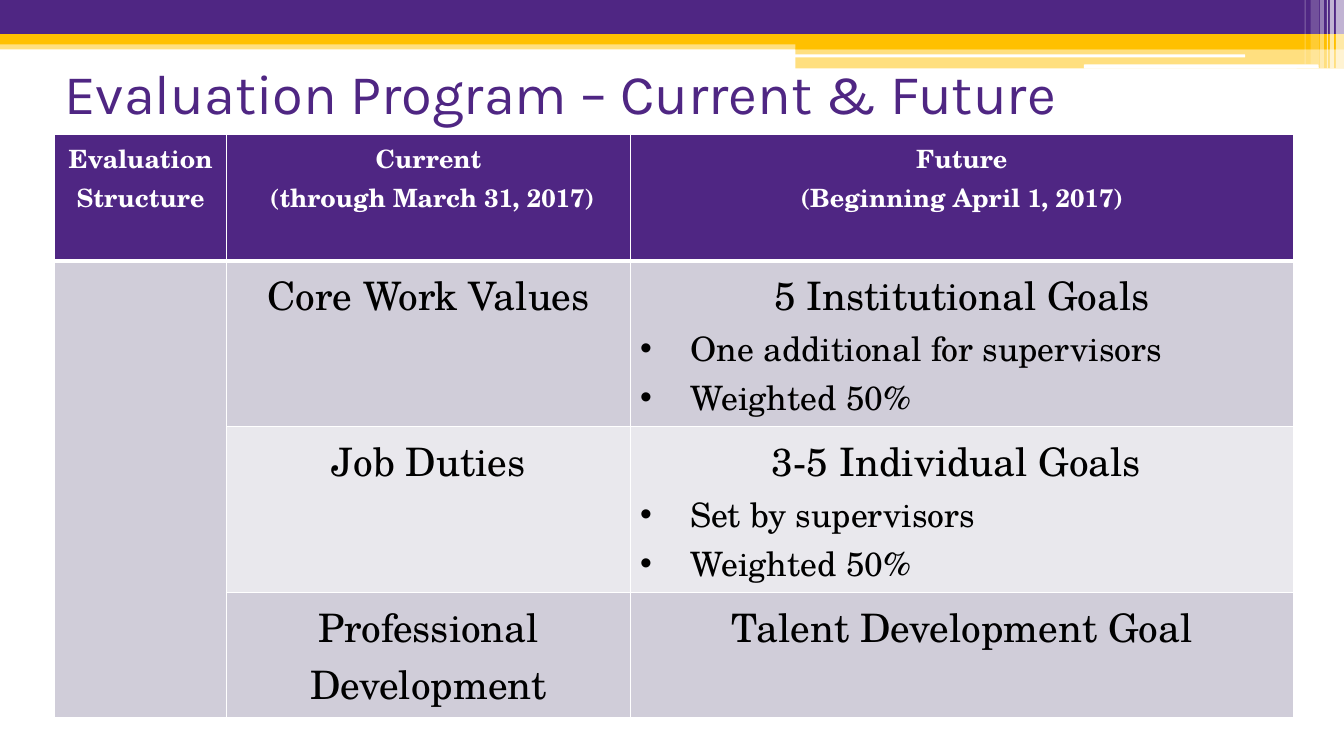
from lxml.etree import SubElement
from pptx import Presentation
from pptx.dml.color import RGBColor
from pptx.enum.shapes import MSO_SHAPE
from pptx.enum.text import MSO_ANCHOR, PP_ALIGN
from pptx.oxml.ns import qn
from pptx.util import Inches, Pt

PURPLE, GOLD, WHITE, BLACK = "4F2683", "FFC000", "FFFFFF", "000000"
DARK_BAND, LIGHT_BAND = "D0CDD9", "E9E8ED"


def rgb(code):
    return RGBColor.from_string(code)


class EvaluationSlide:
    title_font = "Karla"
    body_font = "TeX Gyre Schola"

    def __init__(self, deck):
        self.slide = deck.slides.add_slide(deck.slide_layouts[5])

    def style(self, paragraph, size, color, font, bold=False):
        for run in paragraph.runs:
            run.font.size, run.font.bold, run.font.name = Pt(size), bold, font
            run.font.color.rgb = rgb(color)

    def title(self, wording, left, top, width, height):
        heading = self.slide.shapes.title
        heading.left, heading.top = Inches(left), Inches(top)
        heading.width, heading.height = Inches(width), Inches(height)
        frame = heading.text_frame
        frame.text = wording
        frame.vertical_anchor = MSO_ANCHOR.MIDDLE
        frame.paragraphs[0].alignment = PP_ALIGN.LEFT
        self.style(frame.paragraphs[0], 40, PURPLE, self.title_font)

    def bar(self, left, top, width, height, color, opacity=100, rounded=False):
        kind = MSO_SHAPE.ROUNDED_RECTANGLE if rounded else MSO_SHAPE.RECTANGLE
        strip = self.slide.shapes.add_shape(
            kind, Inches(left), Inches(top), Inches(width), Inches(height))
        strip.shadow.inherit = False
        strip.line.fill.background()
        strip.fill.solid()
        strip.fill.fore_color.rgb = rgb(color)
        if opacity < 100:
            tint = strip.fill._xPr.find(qn("a:solidFill"))[0]
            SubElement(tint, qn("a:alpha"), val=str(opacity * 1000))

    def table(self, left, top, columns, heights):
        grid = self.slide.shapes.add_table(
            len(heights), len(columns), Inches(left), Inches(top),
            Inches(sum(columns)), Inches(sum(heights))).table
        for column, width in zip(grid.columns, columns):
            column.width = Inches(width)
        for row, height in zip(grid.rows, heights):
            row.height = Inches(height)
        return grid

    def cell(self, cell, lines, fill, header=False, under_header=False):
        # Borders come before the fill in the cell properties
        properties = cell._tc.get_or_add_tcPr()
        for side in "LRTB":
            thick = header and side == "B" or under_header and side == "T"
            border = SubElement(properties, qn("a:ln" + side),
                                w=str(Pt(3 if thick else 1)))
            paint = SubElement(border, qn("a:solidFill"))
            SubElement(paint, qn("a:srgbClr"), val=WHITE)
        cell.fill.solid()
        cell.fill.fore_color.rgb = rgb(fill)

        cell.text_frame.text = "\n".join(lines)
        for index, paragraph in enumerate(cell.text_frame.paragraphs):
            if header:
                self.style(paragraph, 18, WHITE, self.body_font, bold=True)
            else:
                self.style(paragraph, 24 if index else 28, BLACK, self.body_font)
            if header or index == 0:
                paragraph.alignment = PP_ALIGN.CENTER
            else:
                self.bullet(paragraph)

    def bullet(self, paragraph):
        properties = paragraph._p.get_or_add_pPr()
        properties.set("marL", str(Inches(0.5)))
        properties.set("indent", str(Inches(-0.5)))
        SubElement(properties, qn("a:buFont"), typeface="Arial")
        SubElement(properties, qn("a:buChar"), char="•")


def main():
    deck = Presentation()
    deck.slide_width, deck.slide_height = Inches(13.33), Inches(7.5)
    page = EvaluationSlide(deck)

    # Banner across the top
    page.bar(0, 0.4, 13.33, 0.09, GOLD, 50)
    page.bar(0, 0, 13.33, 0.34, PURPLE)
    page.bar(0, 0.34, 13.33, 0.1, GOLD)
    page.bar(7.89, 0.39, 5.44, 0.1, GOLD)
    page.bar(7.89, 0.48, 5.44, 0.2, GOLD, 50)
    page.bar(7.88, 0.54, 4.47, 0.03, WHITE, rounded=True)
    page.bar(10.75, 0.64, 2.33, 0.04, WHITE, rounded=True)

    # Translucent stripes at the right end: left, width, height, opacity
    for left, width, height, opacity in [
            (13.25, 0.08, 0.68, 65), (13.19, 0.04, 0.68, 65),
            (13.16, 0.01, 0.68, 60), (13.09, 0.04, 0.68, 40),
            (13, 0.08, 0.64, 20), (12.94, 0.01, 0.64, 30)]:
        page.bar(left, 0, width, height, WHITE, opacity)

    page.title("Evaluation Program – Current & Future", 0.54, 0.33, 12, 1.17)

    # Comparison table
    rows = [
        [["Evaluation Structure"],
         ["Current", " (through March 31, 2017)"],
         ["Future", "(Beginning April 1, 2017)"]],
        [[], ["Core Work Values"],
         ["5 Institutional Goals", "One additional for supervisors",
          "Weighted 50%"]],
        [[], ["Job Duties"],
         ["3-5 Individual Goals ", "Set by supervisors", "Weighted 50%"]],
        [[], ["Professional Development"], ["Talent Development Goal"]],
    ]
    bands = [PURPLE, DARK_BAND, LIGHT_BAND, DARK_BAND]
    comparison = page.table(0.54, 1.33, [1.71, 4, 6.58],
                            [1.26, 1.64, 1.64, 1.23])
    for r, (row, band) in enumerate(zip(rows, bands)):
        for c, lines in enumerate(row):
            fill = DARK_BAND if r and c == 0 else band
            page.cell(comparison.cell(r, c), lines, fill,
                      header=r == 0, under_header=r == 1)
    comparison.cell(1, 0).merge(comparison.cell(3, 0))

    deck.save("out.pptx")


if __name__ == "__main__":
    main()
